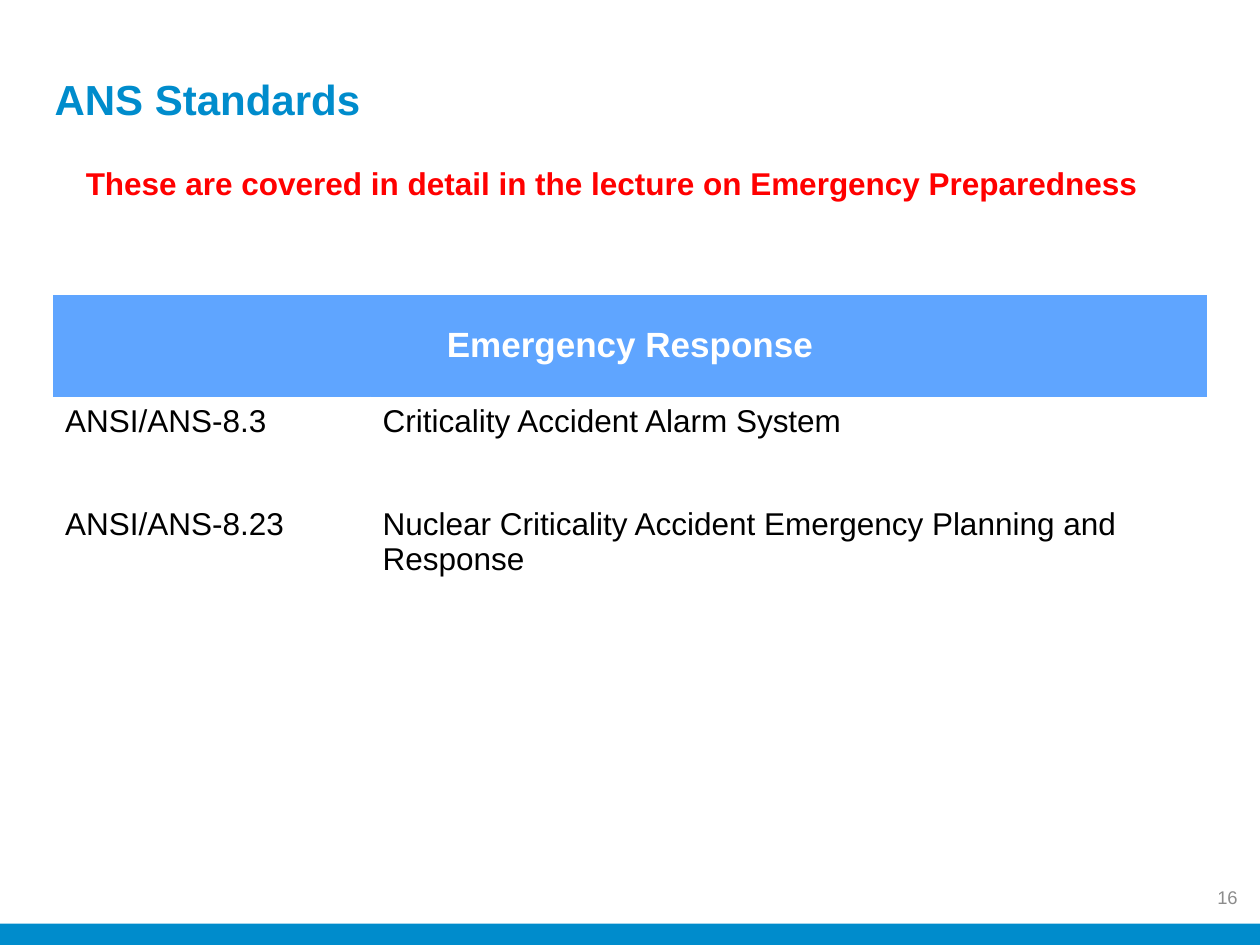
from pptx import Presentation
from pptx.dml.color import RGBColor
from pptx.enum.shapes import MSO_SHAPE
from pptx.enum.text import MSO_ANCHOR, PP_ALIGN
from pptx.util import Cm, Pt

RECTANGLE = MSO_SHAPE.RECTANGLE
TOP, MIDDLE, BOTTOM = MSO_ANCHOR.TOP, MSO_ANCHOR.MIDDLE, MSO_ANCHOR.BOTTOM
LEFT, CENTER, RIGHT = PP_ALIGN.LEFT, PP_ALIGN.CENTER, PP_ALIGN.RIGHT
TITLE_ONLY = 5
SLIDE_WIDTH, SLIDE_HEIGHT = 25.4, 19.05

BLUE, HEADER_BLUE, RED = "008CCC", "5FA5FF", "FF0000"
GRAY, BLACK, WHITE = "8C8C8C", "000000", "FFFFFF"

TITLE_FRAME = {"word_wrap": True, "vertical_anchor": BOTTOM,
               "margin_left": Cm(0.25), "margin_right": Cm(0.25),
               "margin_top": Cm(0.13), "margin_bottom": 0}
NOTE_FRAME = {"word_wrap": False, "vertical_anchor": TOP}
NUMBER_FRAME = {"word_wrap": True, "vertical_anchor": MIDDLE}

STANDARDS = [
    ("ANSI/ANS-8.3", "Criticality Accident Alarm System"),
    ("ANSI/ANS-8.23",
     "Nuclear Criticality Accident Emergency Planning and Response"),
]


def rgb(value):
    return RGBColor.from_string(value)


def set_attributes(target, values):
    for key, value in values.items():
        setattr(target, key, value)


def write(frame, text, size, color, bold=False, align=LEFT):
    frame.text = text
    paragraph = frame.paragraphs[0]
    paragraph.alignment = align
    font = paragraph.runs[0].font
    set_attributes(font, {"name": "Arial", "size": Pt(size), "bold": bold})
    font.color.rgb = rgb(color)


def place(shape, box):
    keys = ("left", "top", "width", "height")
    set_attributes(shape, dict(zip(keys, map(Cm, box))))


def add_title(slide, box, text):
    title = slide.shapes.title
    place(title, box)
    set_attributes(title.text_frame, TITLE_FRAME)
    write(title.text_frame, text, 24, BLUE, bold=True)


def add_label(slide, box, frame_format, text, *style, **options):
    frame = slide.shapes.add_textbox(*map(Cm, box)).text_frame
    set_attributes(frame, frame_format)
    write(frame, text, *style, **options)


def add_footer(slide, box, number):
    """Place the bottom band, with the page number just above its right end."""
    left, top, width, _ = box
    band = slide.shapes.add_shape(RECTANGLE, *map(Cm, box))
    band.shadow.inherit = False
    band.fill.solid()
    band.fill.fore_color.rgb = rgb(BLUE)
    band.line.fill.background()
    number_box = (left + width - 1.48, top - 1.04, 1.28, 1.02)
    add_label(slide, number_box, NUMBER_FRAME, number, 10.5, GRAY, align=RIGHT)


def fill_cell(cell, fill, anchor, text, *style, **options):
    cell.fill.solid()
    cell.fill.fore_color.rgb = rgb(fill)
    cell.vertical_anchor = anchor
    write(cell.text_frame, text, *style, **options)


def add_standards_table(slide, box, heading, standards):
    width, height = box[2:]
    table = slide.shapes.add_table(len(standards) + 1, 2, *map(Cm, box)).table
    code_width, row_height = 6.4, 2.08
    for column, size in zip(table.columns, (code_width, width - code_width)):
        column.width = Cm(size)
    for row in table.rows:
        row.height = Cm(row_height)
    table.rows[len(standards)].height = Cm(height - row_height * len(standards))

    header = table.cell(0, 0)
    header.merge(table.cell(0, 1))
    fill_cell(header, HEADER_BLUE, MIDDLE, heading, 20, WHITE,
              bold=True, align=CENTER)
    for row, standard in enumerate(standards, start=1):
        for column, text in enumerate(standard):
            fill_cell(table.cell(row, column), WHITE, TOP, text, 18, BLACK)


def main():
    presentation = Presentation()
    presentation.slide_width = Cm(SLIDE_WIDTH)
    presentation.slide_height = Cm(SLIDE_HEIGHT)
    slide = presentation.slides.add_slide(presentation.slide_layouts[TITLE_ONLY])

    band_height = 0.43
    add_footer(slide, (0, SLIDE_HEIGHT - band_height, SLIDE_WIDTH, band_height),
               "16")
    add_title(slide, (0.85, 0.85, 23.7, 1.65), "ANS Standards")
    add_standards_table(slide, (1.06, 5.93, 23.28, 6.77),
                        "Emergency Response", STANDARDS)
    add_label(slide, (1.48, 3.18, 21.92, 1.02), NOTE_FRAME,
              "These are covered in detail in the lecture on "
              "Emergency Preparedness", 18, RED, bold=True)
    presentation.save("out.pptx")


if __name__ == "__main__":
    main()
